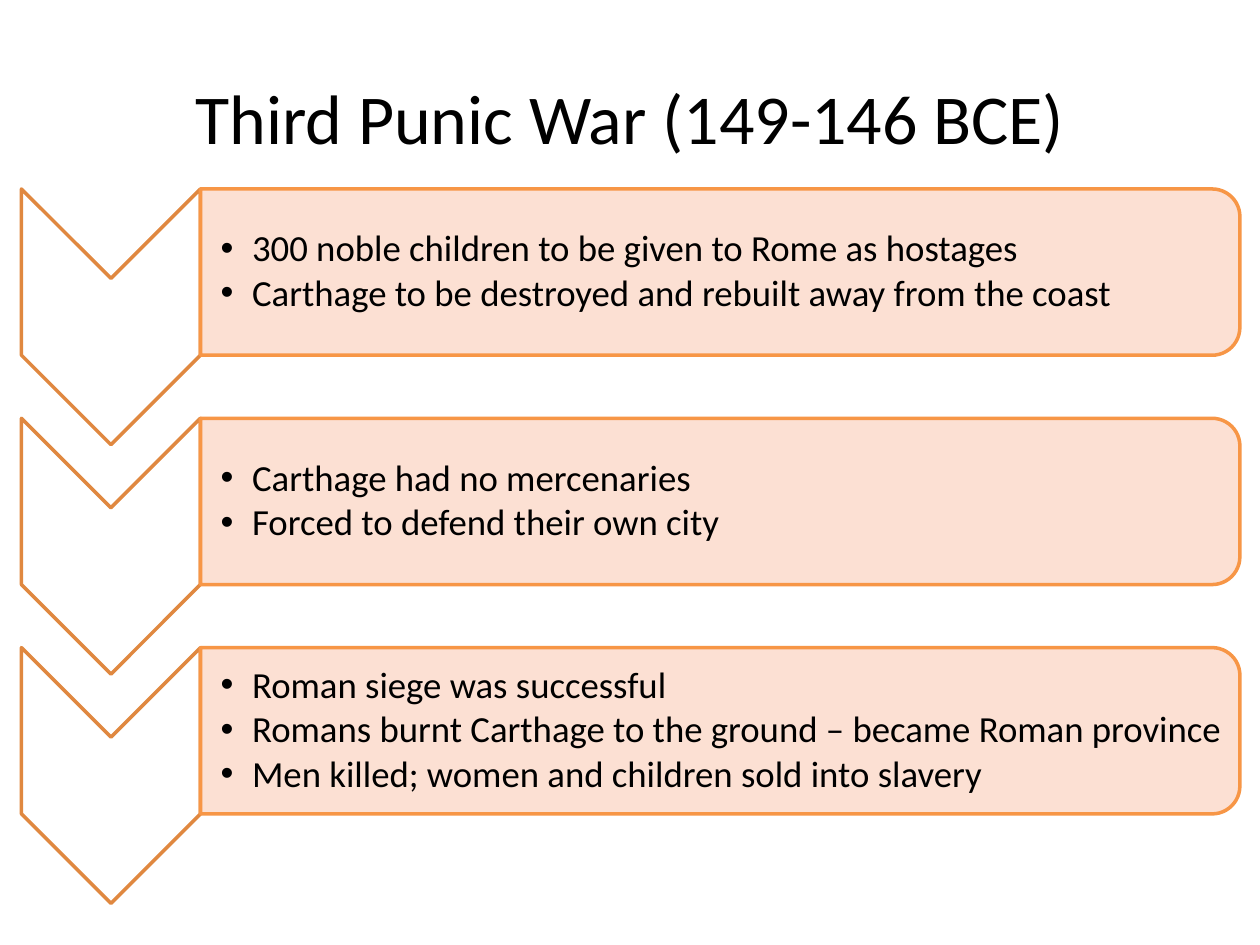
from lxml.etree import SubElement
from pptx import Presentation
from pptx.dml.color import RGBColor
from pptx.enum.shapes import MSO_SHAPE
from pptx.enum.text import MSO_ANCHOR, PP_ALIGN
from pptx.oxml.ns import qn
from pptx.util import Inches, Pt

COLORS = {"text": "000000", "white": "FFFFFF", "panel": "FCDDCF",
          "edge": "F79646", "arrow": "E08840"}

STAGES = [
    ["300 noble children to be given to Rome as hostages",
     "Carthage to be destroyed and rebuilt away from the coast"],
    ["Carthage had no mercenaries",
     "Forced to defend their own city"],
    ["Roman siege was successful",
     "Romans burnt Carthage to the ground – became Roman province",
     "Men killed; women and children sold into slavery"],
]


def color(name):
    return RGBColor.from_string(COLORS[name])


def add_bullet(para):
    props = para._p.get_or_add_pPr()
    props.set("marL", str(Inches(0.25)))
    props.set("indent", str(Inches(-0.25)))
    SubElement(props, qn("a:buFont"), typeface="Arial")
    SubElement(props, qn("a:buChar"), char="•")


def write(frame, lines, size=21, align=PP_ALIGN.LEFT, bullet=False, inset=None):
    frame.word_wrap = True
    frame.vertical_anchor = MSO_ANCHOR.MIDDLE
    if inset:
        (frame.margin_left, frame.margin_top,
         frame.margin_right, frame.margin_bottom) = map(Inches, inset)
    for i, line in enumerate(lines):
        para = frame.paragraphs[0] if i == 0 else frame.add_paragraph()
        para.alignment = align
        if bullet:
            para.line_spacing = 0.9
            para.space_after = Pt(2.7)
            add_bullet(para)
        run = para.add_run()
        run.text = line
        run.font.name = "Calibri"
        run.font.size = Pt(size)
        run.font.color.rgb = color("text")


def add_turned(slide, kind, left, top, width, height, fill, line):
    """Add a shape turned a quarter clockwise that shows in the given box."""
    shape = slide.shapes.add_shape(
        kind, Inches(left + (width - height) / 2),
        Inches(top + (height - width) / 2), Inches(height), Inches(width))
    shape.rotation = 90
    shape.shadow.inherit = False
    shape.fill.solid()
    shape.fill.fore_color.rgb = color(fill)
    shape.line.color.rgb = color(line)
    shape.line.width = Pt(2)
    return shape


def add_title(slide, text, left, top, width, height):
    title = slide.shapes.title
    title.left, title.top = Inches(left), Inches(top)
    title.width, title.height = Inches(width), Inches(height)
    write(title.text_frame, [text], size=40, align=PP_ALIGN.CENTER)


def add_stage(slide, lines, left, top, width, height):
    arrow, panel = height * 0.7, height * 0.65
    # Down-pointing chevron
    add_turned(slide, MSO_SHAPE.CHEVRON, left, top, arrow, height,
               "white", "arrow")
    # Panel with rounded right corners, slightly see-through
    left, width = left + arrow, width - arrow
    shape = add_turned(slide, MSO_SHAPE.ROUND_2_SAME_RECTANGLE, left, top,
                       width, panel, "panel", "edge")
    tint = shape.fill._xPr.find(qn("a:solidFill"))[0]
    SubElement(tint, qn("a:alpha"), val="90000")
    # Bulleted text, kept clear of the rounded corners
    pad = 0.065
    box = slide.shapes.add_textbox(Inches(left), Inches(top + pad),
                                   Inches(width - pad),
                                   Inches(panel - 2 * pad))
    write(box.text_frame, lines, bullet=True, inset=(0.16, 0.01, 0.01, 0.01))


def main():
    deck = Presentation()
    deck.slide_width, deck.slide_height = Inches(10), Inches(7.5)
    slide = deck.slides.add_slide(deck.slide_layouts[5])
    add_title(slide, "Third Punic War (149-146 BCE)", 0.5, 0.3, 9, 1.25)
    for i, lines in enumerate(STAGES):
        add_stage(slide, lines, 0.17, 1.5 + i * 1.82, 9.67, 2.03)
    deck.save("out.pptx")


if __name__ == "__main__":
    main()
